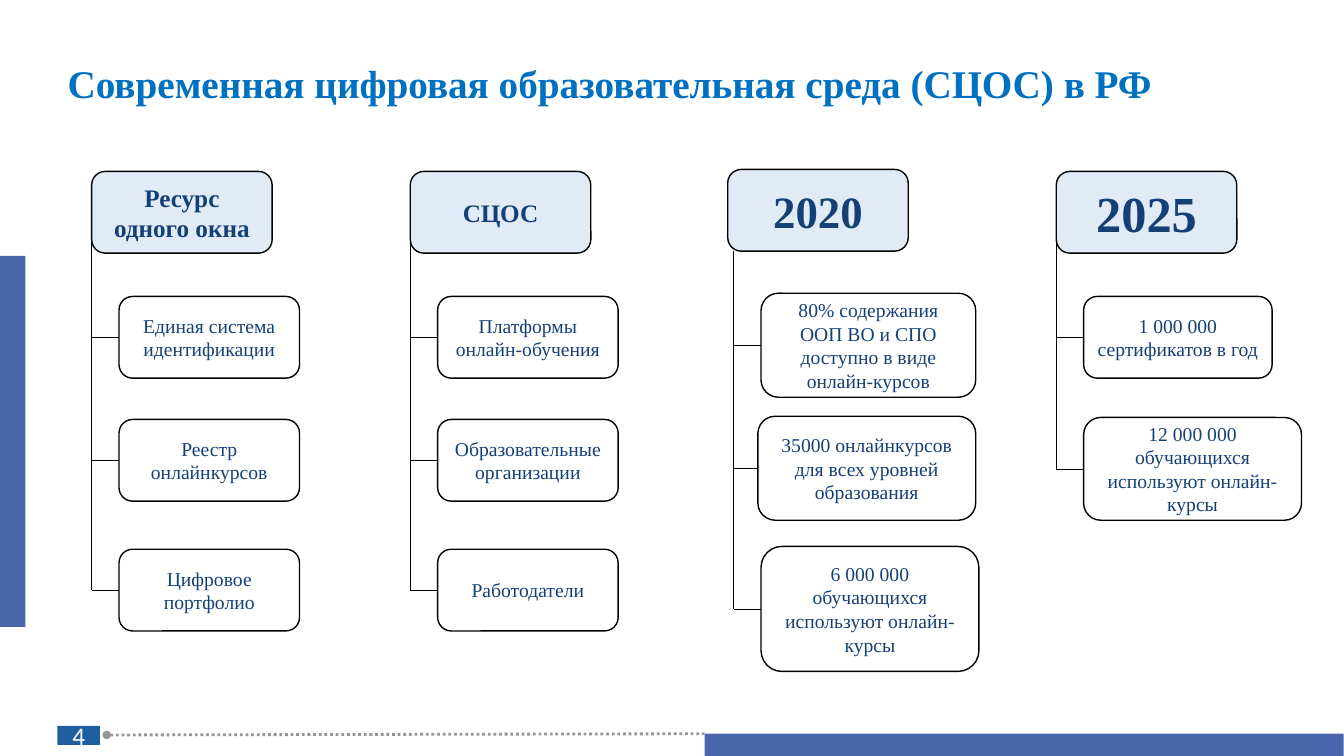
from dataclasses import dataclass

from lxml import etree
from pptx import Presentation
from pptx.dml.color import RGBColor
from pptx.enum import dml, shapes, text
from pptx.oxml import ns
from pptx.util import Cm, Pt


@dataclass(frozen=True)
class Theme:
    title: str = "0070C0"
    ink: str = "154076"
    header: str = "E0EBF6"
    bar: str = "4A66AC"
    badge: str = "1F5FA0"
    dots: str = "969696"
    black: str = "000000"
    white: str = "FFFFFF"
    serif: str = "Times New Roman"
    sans: str = "Calibri"
    title_size: int = 28
    header_size: int = 18
    item_size: int = 14
    number_size: int = 18


@dataclass(frozen=True)
class Area:
    left: float
    top: float
    width: float
    height: float

    @property
    def middle(self) -> float:
        return self.top + self.height / 2


@dataclass(frozen=True)
class Item:
    label: str
    area: Area


@dataclass(frozen=True)
class Branch:
    label: str
    area: Area
    spine: float
    spine_top: float
    items: list[Item]
    size: int = Theme.header_size


THEME = Theme()
BOX_WIDTH, BOX_HEIGHT = 4.55, 2.06
HEADER_TOP = 4.32
SPINE_TOP = 6.02
INDENT = 0.69
ROW_TOPS = (7.47, 10.57, 13.84)


def regular_branch(label: str, left: float, labels: list[str]) -> Branch:
    items = [Item(name, Area(left + INDENT, top, BOX_WIDTH, BOX_HEIGHT))
             for name, top in zip(labels, ROW_TOPS)]
    return Branch(label, Area(left, HEADER_TOP, BOX_WIDTH, BOX_HEIGHT),
                  left, SPINE_TOP, items)


BRANCHES = [
    regular_branch("Ресурс одного окна", 2.31, [
        "Единая система идентификации",
        "Реестр онлайнкурсов",
        "Цифровое портфолио"]),
    regular_branch("СЦОС", 10.34, [
        "Платформы онлайн-обучения",
        "Образовательные организации",
        "Работодатели"]),
    Branch("2020", Area(18.34, 4.27, BOX_WIDTH, BOX_HEIGHT), 18.49, 6.32, [
        Item("80% содержания ООП ВО и СПО доступно в виде онлайн-курсов",
             Area(19.18, 7.39, 5.41, 2.62)),
        Item("35000 онлайнкурсов для всех уровней образования",
             Area(19.1, 10.49, 5.49, 2.62)),
        Item("6 000 000 обучающихся используют онлайн-курсы",
             Area(19.18, 13.77, 5.49, 3.15))], 32),
    Branch("2025", Area(26.62, HEADER_TOP, BOX_WIDTH, BOX_HEIGHT), 26.62, SPINE_TOP, [
        Item("1 000 000 сертификатов в год",
             Area(27.31, ROW_TOPS[0], 4.75, BOX_HEIGHT)),
        Item("12 000 000 обучающихся используют онлайн-курсы",
             Area(27.31, 10.52, 5.49, 2.59))], 36),
]


def write(shape, label: str, size: int, color: str, font: str = THEME.serif,
          bold: bool = False, align=text.PP_ALIGN.CENTER):
    frame = shape.text_frame
    frame.word_wrap = True
    frame.auto_size = text.MSO_AUTO_SIZE.NONE
    frame.vertical_anchor = text.MSO_ANCHOR.MIDDLE
    para = frame.paragraphs[0]
    para.alignment = align
    span = para.add_run()
    span.text = label
    span.font.size = Pt(size)
    span.font.name = font
    span.font.bold = bold
    span.font.color.rgb = RGBColor.from_string(color)
    return para


def draw_shape(page, kind, area: Area, fill: str | None = None, outlined: bool = False):
    shape = page.shapes.add_shape(kind, Cm(area.left), Cm(area.top),
                                  Cm(area.width), Cm(area.height))
    shape.shadow.inherit = False
    if fill:
        shape.fill.solid()
        shape.fill.fore_color.rgb = RGBColor.from_string(fill)
    else:
        shape.fill.background()
    if outlined:
        shape.line.color.rgb = RGBColor.from_string(THEME.black)
        shape.line.width = Pt(1)
    else:
        shape.line.fill.background()
    return shape


def draw_line(page, start: tuple[float, float], end: tuple[float, float],
              color: str = THEME.black, width: float = 0.5):
    line = page.shapes.add_connector(shapes.MSO_CONNECTOR.STRAIGHT,
                                     Cm(start[0]), Cm(start[1]), Cm(end[0]), Cm(end[1]))
    line.line.color.rgb = RGBColor.from_string(color)
    line.line.width = Pt(width)
    etree.SubElement(line._element.spPr, ns.qn("a:effectLst"))
    return line


def draw_title(page) -> None:
    title = page.shapes.title
    title.left, title.top = Cm(1.45), Cm(0.33)
    title.width, title.height = Cm(29.21), Cm(3.68)
    para = write(title, "Современная цифровая образовательная среда (СЦОС) в РФ",
                 THEME.title_size, THEME.title, bold=True, align=text.PP_ALIGN.LEFT)
    para.line_spacing = 0.9


def draw_frame(page) -> None:
    rectangle = shapes.MSO_SHAPE.RECTANGLE
    # Side and bottom bars
    draw_shape(page, rectangle, Area(0, 6.45, 0.64, 9.35), THEME.bar)
    draw_shape(page, rectangle, Area(17.76, 18.49, 16.1, 0.56), THEME.bar)
    # Page number
    badge = draw_shape(page, rectangle, Area(1.45, 18.29, 1.07, 0.48), THEME.badge)
    write(badge, "4", THEME.number_size, THEME.white, THEME.sans)
    frame = badge.text_frame
    frame.margin_left = frame.margin_right = Cm(0.25)
    frame.margin_top = frame.margin_bottom = Cm(0.25)
    # Dotted rule with a round end
    rule = draw_line(page, (17.76, 18.49), (2.69, 18.52), THEME.dots, 2)
    rule.line.dash_style = dml.MSO_LINE.ROUND_DOT
    etree.SubElement(rule.line._get_or_add_ln(), ns.qn("a:tailEnd"), type="oval")


def draw_branch(page, branch: Branch) -> None:
    rounded = shapes.MSO_SHAPE.ROUNDED_RECTANGLE
    header = draw_shape(page, rounded, branch.area, THEME.header, outlined=True)
    write(header, branch.label, branch.size, THEME.ink, bold=True)
    for item in branch.items:
        box = draw_shape(page, rounded, item.area, outlined=True)
        write(box, item.label, THEME.item_size, THEME.ink)
    # Spine down to the last item, one arm per item
    draw_line(page, (branch.spine, branch.spine_top),
              (branch.spine, branch.items[-1].area.middle))
    for item in branch.items:
        draw_line(page, (item.area.left, item.area.middle),
                  (branch.spine, item.area.middle))


def main() -> None:
    deck = Presentation()
    deck.slide_width, deck.slide_height = Cm(33.87), Cm(19.05)
    page = deck.slides.add_slide(deck.slide_layouts[5])
    draw_title(page)
    draw_frame(page)
    for branch in BRANCHES:
        draw_branch(page, branch)
    deck.save("out.pptx")


if __name__ == "__main__":
    main()
